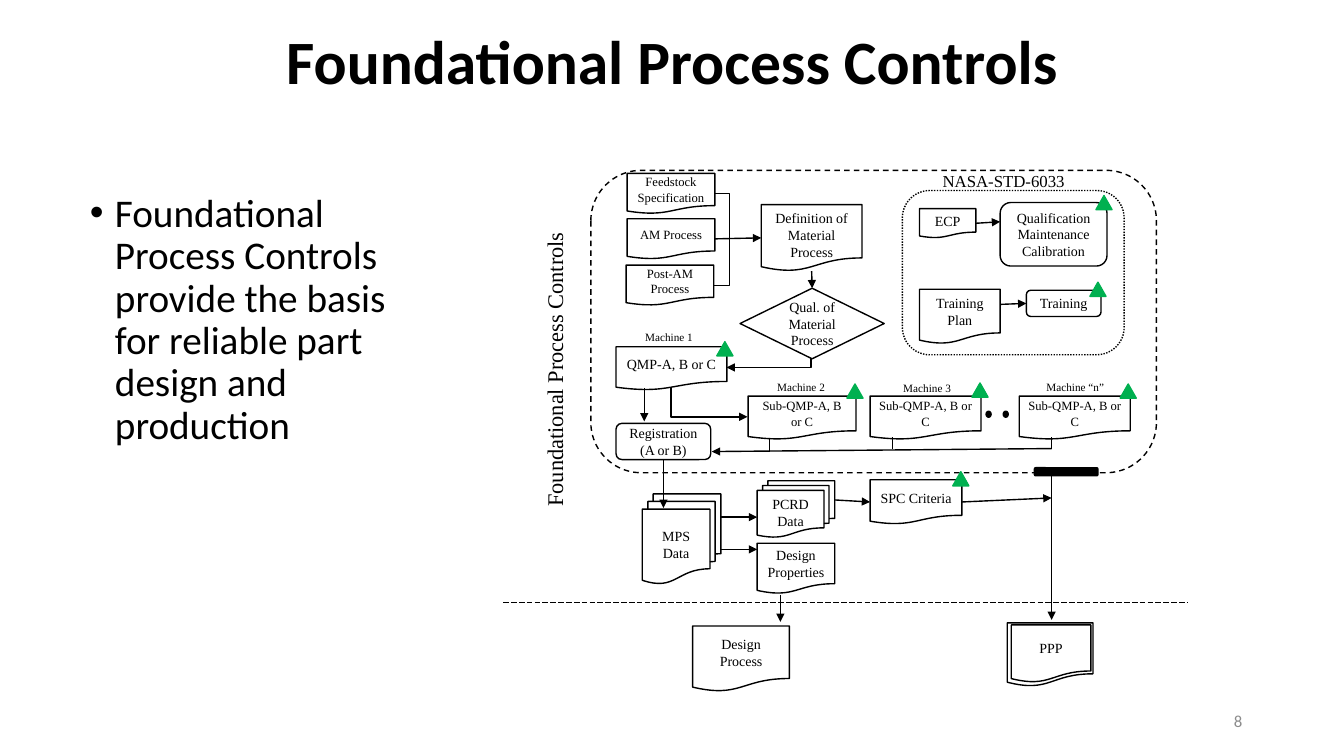
from lxml.etree import SubElement
from pptx import Presentation
from pptx.dml.color import RGBColor
from pptx.enum.dml import MSO_LINE
from pptx.enum.shapes import MSO_CONNECTOR, MSO_SHAPE
from pptx.enum.text import MSO_ANCHOR, PP_ALIGN
from pptx.oxml.ns import qn
from pptx.util import Inches, Pt

BLACK, GREEN, GRAY = "000000", "00B050", "8C8C8C"
SERIF = "Times New Roman"
DOCUMENT = MSO_SHAPE.FLOWCHART_DOCUMENT
STACK = MSO_SHAPE.FLOWCHART_MULTIDOCUMENT
ROUNDED = MSO_SHAPE.FLOWCHART_ALTERNATE_PROCESS


def style_text(frame, size, align, font=SERIF, color=BLACK, bold=False):
    for paragraph in frame.paragraphs:
        paragraph.alignment = align
        for run in paragraph.runs:
            run.font.size = Pt(size)
            run.font.name = font
            run.font.bold = bold
            run.font.color.rgb = RGBColor.from_string(color)


def add_part(kind, box, fill=None, dash=None):
    part = slide.shapes.add_shape(kind, *map(Inches, box))
    part.shadow.inherit = False
    if fill:
        part.fill.solid()
        part.fill.fore_color.rgb = RGBColor.from_string(fill)
    else:
        part.fill.background()
    part.line.color.rgb = RGBColor.from_string(fill or BLACK)
    part.line.width = Pt(1)
    if dash:
        part.line.dash_style = dash
    return part


prs = Presentation()
prs.slide_width, prs.slide_height = Inches(13.33), Inches(7.5)
slide = prs.slides.add_slide(prs.slide_layouts[1])

title = slide.shapes.title
title.left, title.top, title.width, title.height = map(Inches, (0.92, 0.12, 11.5, 1.04))
title.text_frame.text = "Foundational Process Controls"
title.text_frame.vertical_anchor = MSO_ANCHOR.MIDDLE
title.text_frame.paragraphs[0].line_spacing = 0.9
style_text(title.text_frame, 44, PP_ALIGN.CENTER, "Calibri", bold=True)

body = slide.placeholders[1]
body.left, body.top, body.width, body.height = map(Inches, (0.79, 1.87, 3.56, 4.76))
body.text_frame.text = "Foundational Process Controls provide the basis for reliable part design and production"
message = body.text_frame.paragraphs[0]
message.line_spacing = 0.9
message.space_before = Pt(0)
bullet_properties = message._p.get_or_add_pPr()
bullet_properties.set("marL", str(Inches(0.25)))
bullet_properties.set("indent", str(-Inches(0.25)))
SubElement(bullet_properties, qn("a:buFont"), typeface="Arial")
SubElement(bullet_properties, qn("a:buChar"), char="•")
style_text(body.text_frame, 28, PP_ALIGN.LEFT, "Calibri")

add_part(ROUNDED, (5.86, 1.69, 5.61, 3), dash=MSO_LINE.DASH)
add_part(MSO_SHAPE.ROUNDED_RECTANGLE, (8.95, 1.89, 2.2, 1.63), dash=MSO_LINE.ROUND_DOT)
add_part(DOCUMENT, (9.99, 6.18, 0.85, 0.63))

steps = {}
for step, kind, box, size, text in [
    ("feedstock", DOCUMENT, (6.22, 1.72, 0.87, 0.4), 9, "Feedstock\nSpecification"),
    ("am", DOCUMENT, (6.22, 2.17, 0.87, 0.4), 9, "AM Process"),
    ("post_am", DOCUMENT, (6.21, 2.63, 0.87, 0.4), 9, "Post-AM Process"),
    ("definition", DOCUMENT, (7.55, 2.03, 1, 0.66), 10, "Definition of\nMaterial Process"),
    ("decision", MSO_SHAPE.FLOWCHART_DECISION, (7.34, 2.86, 1.43, 0.7), 10, "Qual. of Material Process"),
    ("ecp", DOCUMENT, (9.12, 2.07, 0.56, 0.29), 10, "ECP"),
    ("qualification", ROUNDED, (9.92, 2.01, 1.06, 0.63), 10, "Qualification Maintenance Calibration"),
    ("plan", DOCUMENT, (9.12, 2.87, 0.8, 0.54), 10, "Training Plan"),
    ("training", ROUNDED, (10.18, 2.88, 0.74, 0.26), 10, "Training"),
    ("qmp", DOCUMENT, (6.11, 3.44, 1.1, 0.43), 10, "QMP-A, B or C"),
    ("sub_2", DOCUMENT, (7.42, 3.93, 1.07, 0.43), 9, "Sub-QMP-A, B or C"),
    ("sub_3", DOCUMENT, (8.63, 3.93, 1.1, 0.43), 9, "Sub-QMP-A, B or C"),
    ("sub_n", DOCUMENT, (10.11, 3.93, 1.1, 0.43), 9, "Sub-QMP-A, B or C"),
    ("registration", ROUNDED, (6.11, 4.2, 0.94, 0.36), 10, "Registration\n(A or B)"),
    ("mps", STACK, (6.37, 4.9, 0.78, 0.89), 10, "MPS\nData"),
    ("pcrd", STACK, (7.51, 4.77, 0.77, 0.56), 10, "PCRD\nData"),
    ("spc", DOCUMENT, (8.63, 4.76, 0.91, 0.44), 10, "SPC Criteria"),
    ("properties", DOCUMENT, (7.51, 5.39, 0.77, 0.5), 10, "Design\nProperties"),
    ("design", DOCUMENT, (6.87, 6.21, 0.96, 0.65), 10, "Design Process"),
    ("ppp", DOCUMENT, (10.03, 6.2, 0.79, 0.57), 10, "PPP"),
]:
    part = add_part(kind, box)
    frame = part.text_frame
    frame.text = text
    frame.word_wrap = True
    frame.margin_left = frame.margin_right = Inches(0.08)
    frame.vertical_anchor = MSO_ANCHOR.TOP if step == "definition" else MSO_ANCHOR.MIDDLE
    style_text(frame, size, PP_ALIGN.CENTER)
    steps[step] = part

for left, top in [(10.81, 2.8), (10.87, 1.94), (7.11, 3.39), (8.4, 3.81),
                  (9.64, 3.8), (11.11, 3.81), (9.45, 4.68)]:
    add_part(MSO_SHAPE.ISOSCELES_TRIANGLE, (left, top, 0.16, 0.14), GREEN)
for left in (9.78, 9.95):
    add_part(MSO_SHAPE.OVAL, (left, 4.08, 0.05, 0.06), BLACK)
add_part(MSO_SHAPE.ROUNDED_RECTANGLE, (10.26, 4.64, 0.63, 0.08), BLACK)

for text, box, size, rotation in [
    ("Foundational Process Controls", (4.02, 3.46, 2.96, 0.37), 16, 270),
    ("NASA-STD-6033", (9.25, 1.64, 1.42, 0.3), 12, 0),
    ("Machine 1", (6.3, 3.23, 0.68, 0.24), 8, 0),
    ("Machine 2", (7.61, 3.72, 0.68, 0.24), 8, 0),
    ("Machine 3", (8.86, 3.73, 0.68, 0.24), 8, 0),
    ("Machine “n”", (10.28, 3.72, 0.78, 0.24), 8, 0),
]:
    label = slide.shapes.add_textbox(*map(Inches, box))
    label.rotation = rotation
    label.text_frame.text = text
    label.text_frame.word_wrap = False
    style_text(label.text_frame, size, PP_ALIGN.LEFT)

page_number = slide.shapes.add_textbox(*map(Inches, (9.42, 6.95, 3, 0.4)))
page_number.text_frame.text = "8"
page_number.text_frame.word_wrap = True
page_number.text_frame.vertical_anchor = MSO_ANCHOR.MIDDLE
style_text(page_number.text_frame, 12, PP_ALIGN.RIGHT, "Calibri", GRAY)

flows = []
for ends, arrow, start, finish in [
    ((4.99, 5.98, 11.78, 5.98), False, None, None),
    ((7.09, 2.37, 7.55, 2.37), True, ("am", 3), ("definition", 1)),
    ((8.05, 2.65, 8.05, 2.86), True, ("definition", 2), ("decision", 0)),
    ((9.68, 2.21, 9.92, 2.2), True, ("ecp", 3), None),
    ((9.92, 3.02, 10.18, 3.01), True, None, ("training", 1)),
    ((6.39, 3.85, 6.39, 4.18), True, None, None),
    ((6.58, 4.56, 6.58, 5.04), True, ("registration", 2), None),
    ((10.43, 4.45, 7.06, 4.48), True, None, None),
    ((10.43, 4.45, 10.43, 4.34), False, None, None),
    ((8.85, 4.45, 8.85, 4.34), False, None, None),
    ((7.63, 4.48, 7.63, 4.36), False, None, None),
    ((7.15, 5.13, 7.51, 5.13), True, None, None),
    ((7.15, 5.45, 7.51, 5.45), True, None, None),
    ((8.28, 4.96, 8.63, 4.96), True, None, ("spc", 1)),
    ((9.54, 4.96, 10.43, 4.94), True, ("spc", 3), None),
    ((7.74, 5.9, 7.74, 6.17), True, None, None),
    ((10.43, 4.65, 10.43, 6.15), True, None, None),
]:
    flow = slide.shapes.add_connector(MSO_CONNECTOR.STRAIGHT, *map(Inches, ends))
    if start:
        flow.begin_connect(steps[start[0]], start[1])
    if finish:
        flow.end_connect(steps[finish[0]], finish[1])
    flows.append((flow, arrow))

for ends, arrow, preset, turn, bend in [
    ((7.08, 2.83, 7.09, 1.92), False, "bentConnector3", 0, 1600000),
    ((7.58, 3.18, 7.67, 4.02), True, "bentConnector2", 90, None),
    ((7.18, 3.61, 6.89, 4.37), True, "bentConnector2", 270, None),
]:
    flow = slide.shapes.add_connector(MSO_CONNECTOR.ELBOW, *map(Inches, ends))
    properties = flow._element.spPr
    geometry = properties.find(qn("a:prstGeom"))
    geometry.set("prst", preset)
    if turn:
        properties.find(qn("a:xfrm")).set("rot", str(turn * 60000))
    if bend:
        SubElement(geometry.find(qn("a:avLst")), qn("a:gd"), name="adj1", fmla=f"val {bend}")
    flows.append((flow, arrow))

for flow, arrow in flows:
    flow.line.color.rgb = RGBColor.from_string(BLACK)
    flow.line.width = Pt(1)
    if arrow:
        SubElement(flow.line._get_or_add_ln(), qn("a:tailEnd"), type="triangle")
    SubElement(flow._element.spPr, qn("a:effectLst"))

boundary = flows[0][0]
boundary.line.width = Pt(0.5)
boundary.line.dash_style = MSO_LINE.LONG_DASH

prs.save("out.pptx")
